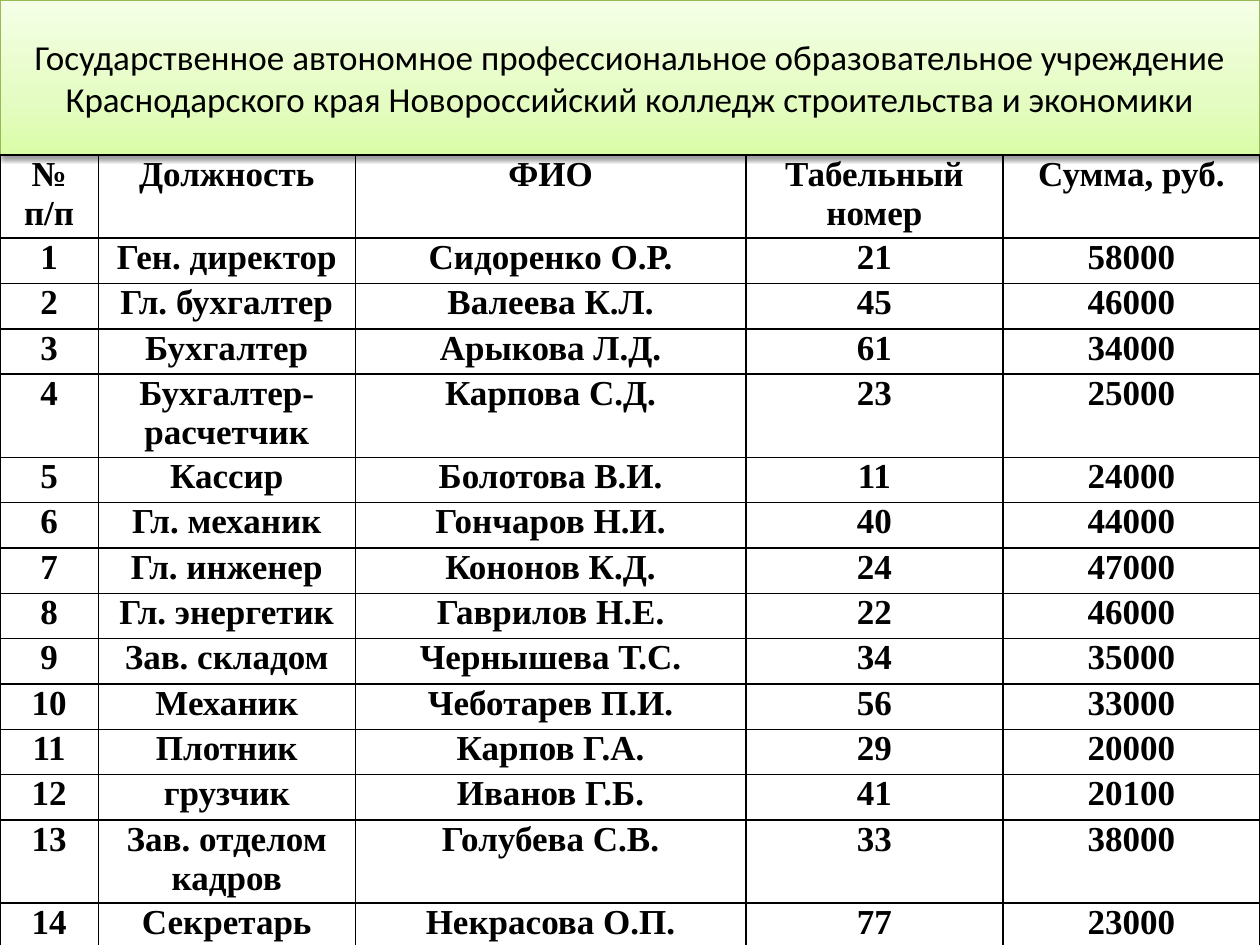
from copy import deepcopy
from typing import NamedTuple

from lxml import etree
from pptx import Presentation
from pptx import util as u
from pptx.dml.color import RGBColor
from pptx.enum import text
from pptx.oxml import ns

BLACK = RGBColor(0x00, 0x00, 0x00)
BANNER_LINE = RGBColor(0x98, 0xB9, 0x55)
BANNER_STOPS = (
    (0, RGBColor(0xDA, 0xFD, 0xA7)),
    (0.35, RGBColor(0xE4, 0xFC, 0xC2)),
    (1, RGBColor(0xF5, 0xFF, 0xE7)),
)
SLIDE_WIDTH = 10
BANNER_HEIGHT = 1.23
COLUMN_WIDTHS = (0.78, 2.04, 3.1, 2.04, 2.04)
ROW_HEIGHT = 0.36
TALL_ROW_HEIGHT = 0.66
TALL_ROWS = (0, 4, 13)
HEADINGS = ("№ п/п", "Должность", "ФИО", "Табельный номер", "Сумма, руб.")
TITLE = (
    "Государственное автономное профессиональное образовательное учреждение "
    "Краснодарского края Новороссийский колледж строительства и экономики"
)


class Employee(NamedTuple):
    position: str
    name: str
    number: int
    salary: int


EMPLOYEES = (
    Employee("Ген. директор", "Сидоренко О.Р.", 21, 58000),
    Employee("Гл. бухгалтер", "Валеева К.Л.", 45, 46000),
    Employee("Бухгалтер", "Арыкова Л.Д.", 61, 34000),
    Employee("Бухгалтер-расчетчик", "Карпова С.Д.", 23, 25000),
    Employee("Кассир", "Болотова В.И.", 11, 24000),
    Employee("Гл. механик", "Гончаров Н.И.", 40, 44000),
    Employee("Гл. инженер", "Кононов К.Д.", 24, 47000),
    Employee("Гл. энергетик", "Гаврилов Н.Е.", 22, 46000),
    Employee("Зав. складом", "Чернышева Т.С.", 34, 35000),
    Employee("Механик", "Чеботарев П.И.", 56, 33000),
    Employee("Плотник", "Карпов Г.А.", 29, 20000),
    Employee("грузчик", "Иванов Г.Б.", 41, 20100),
    Employee("Зав. отделом кадров", "Голубева С.В.", 33, 38000),
    Employee("Секретарь", "Некрасова О.П.", 77, 23000),
)


def add_child(parent, tag: str, **attributes):
    return etree.SubElement(
        parent, ns.qn(tag), {key: str(value) for key, value in attributes.items()}
    )


def format_paragraph(paragraph, font_name: str, bold: bool) -> None:
    paragraph.alignment = text.PP_ALIGN.CENTER
    font = paragraph.font
    font.name = font_name
    font.size = u.Pt(20)
    font.bold = bold
    font.color.rgb = BLACK


def fill_banner(shape) -> None:
    shape.fill.gradient()
    shape.fill.gradient_angle = 90
    stop_list = shape._element.spPr.find(".//" + ns.qn("a:gsLst"))
    stop_list.append(deepcopy(stop_list[0]))
    for stop, (position, color) in zip(shape.fill.gradient_stops, BANNER_STOPS):
        stop.position = position
        stop.color.rgb = color


def add_shadow(shape) -> None:
    shape.shadow.inherit = False
    effects = shape._element.spPr.find(ns.qn("a:effectLst"))
    shadow = add_child(
        effects, "a:outerShdw", blurRad=u.Pt(3.1), dist=u.Pt(1.6),
        dir=5400000, rotWithShape=0,
    )
    color = add_child(shadow, "a:srgbClr", val=BLACK)
    add_child(color, "a:alpha", val=38000)


def draw_banner(slide) -> None:
    banner = slide.shapes.title
    banner.left = banner.top = 0
    banner.width, banner.height = u.Inches(SLIDE_WIDTH), u.Inches(BANNER_HEIGHT)
    fill_banner(banner)
    banner.line.color.rgb = BANNER_LINE
    banner.line.width = u.Pt(0.75)
    add_shadow(banner)
    frame = banner.text_frame
    frame.text = TITLE
    frame.vertical_anchor = text.MSO_ANCHOR.MIDDLE
    format_paragraph(frame.paragraphs[0], "Calibri", False)


def draw_borders(cell) -> None:
    properties = cell._tc.get_or_add_tcPr()
    for side in ("a:lnL", "a:lnR", "a:lnT", "a:lnB"):
        border = add_child(properties, side, w=u.Pt(1))
        add_child(add_child(border, "a:solidFill"), "a:srgbClr", val=BLACK)


def fill_cell(cell, value: object) -> None:
    cell.text = str(value)
    cell.margin_left = cell.margin_right = u.Inches(0.07)
    cell.margin_top = cell.margin_bottom = 0
    draw_borders(cell)
    cell.fill.background()
    format_paragraph(cell.text_frame.paragraphs[0], "Times New Roman", True)


def draw_payroll(slide) -> None:
    rows = [HEADINGS] + [
        (index, *employee) for index, employee in enumerate(EMPLOYEES, 1)
    ]
    heights = [
        TALL_ROW_HEIGHT if index in TALL_ROWS else ROW_HEIGHT
        for index in range(len(rows))
    ]
    table = slide.shapes.add_table(
        len(rows), len(HEADINGS), 0, u.Inches(BANNER_HEIGHT),
        u.Inches(SLIDE_WIDTH), u.Inches(sum(heights)),
    ).table
    table.first_row = table.horz_banding = False
    for column, width in zip(table.columns, COLUMN_WIDTHS):
        column.width = u.Inches(width)
    for row, height, values in zip(table.rows, heights, rows):
        row.height = u.Inches(height)
        for cell, value in zip(row.cells, values):
            fill_cell(cell, value)


def main() -> None:
    presentation = Presentation()
    presentation.slide_width = u.Inches(SLIDE_WIDTH)
    presentation.slide_height = u.Inches(7.5)
    slide = presentation.slides.add_slide(presentation.slide_layouts[5])
    draw_banner(slide)
    draw_payroll(slide)
    presentation.save("out.pptx")


if __name__ == "__main__":
    main()
